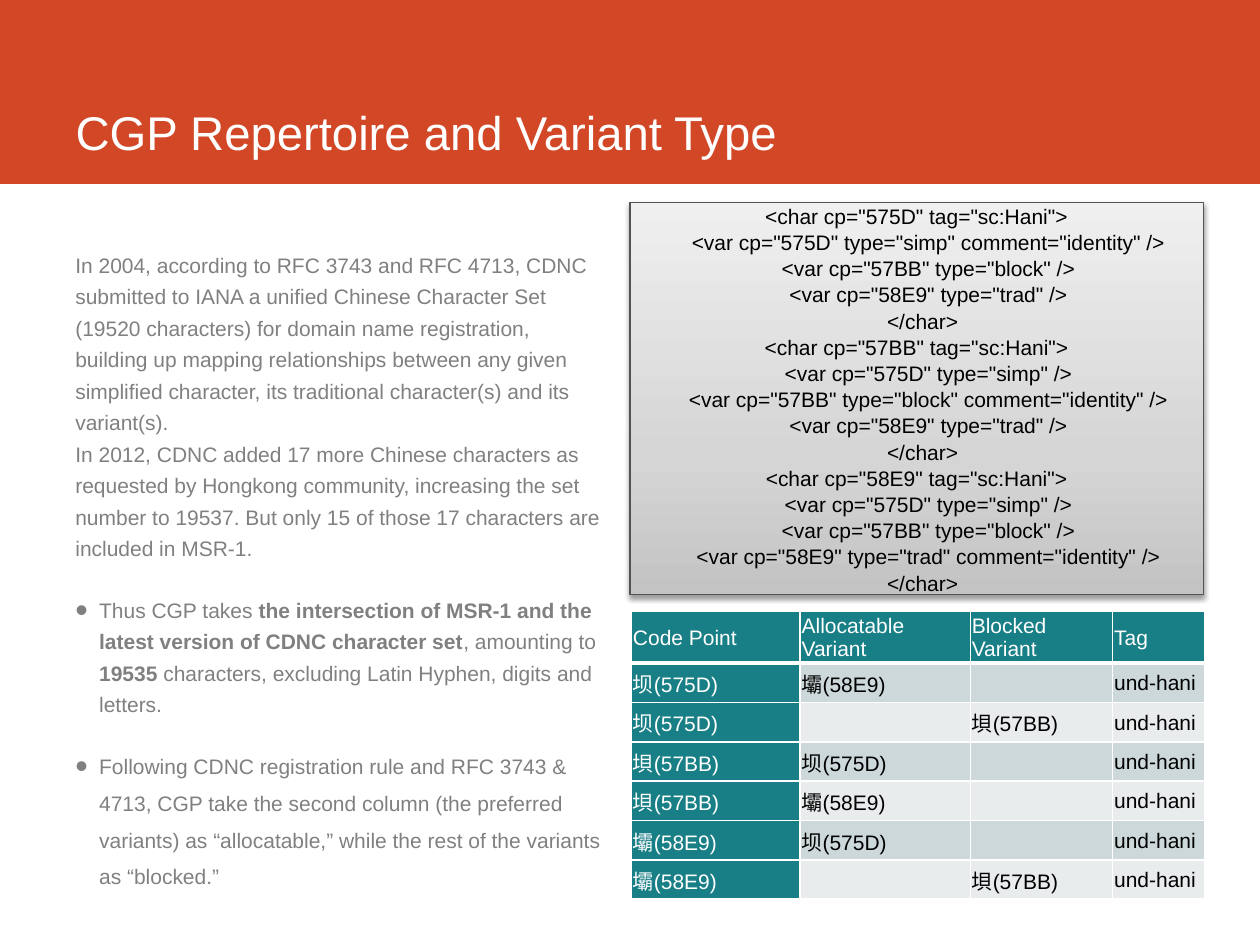
from lxml.etree import SubElement
from pptx import Presentation
from pptx.dml.color import RGBColor
from pptx.enum.shapes import MSO_SHAPE
from pptx.enum.text import MSO_ANCHOR, MSO_AUTO_SIZE, PP_ALIGN
from pptx.oxml.ns import qn
from pptx.util import Cm, Pt

COLORS = {
    "band": "D24726", "white": "FFFFFF", "body": "808080", "black": "000000",
    "teal": "197F86", "odd_row": "CCD8D9", "even_row": "E8ECED", "outline": "535353",
}
GRADIENT = [(0, "C3C3C3"), (35, "D5D5D5"), (100, "EFEFEF")]
SPACE_WIDTH = 0.12  # one 12 pt space, in cm

INTRO = [
    "In 2004, according to RFC 3743 and RFC 4713, CDNC submitted to IANA a unified Chinese "
    "Character Set (19520 characters) for domain name registration, building up mapping "
    "relationships between any given simplified character, its traditional character(s) "
    "and its variant(s).",
    "In 2012, CDNC added 17 more Chinese characters as requested by Hongkong community, "
    "increasing the set number to 19537. But only 15 of those 17 characters are included "
    "in MSR-1.",
]
# Every second part of a bullet is bold
INTERSECTION = [
    "Thus CGP takes ",
    "the intersection of MSR-1 and the latest version of CDNC character set",
    ", amounting to ", "19535",
    " characters, excluding Latin Hyphen, digits and letters.",
]
RULE = [
    "Following CDNC registration rule and RFC 3743 & 4713, CGP take the second column "
    "(the preferred variants) as “allocatable,” while the rest of the variants as “blocked.”",
]
VARIANT_TYPES = {"575D": "simp", "57BB": "block", "58E9": "trad"}
TABLE_ROWS = [
    ["Code Point", "Allocatable Variant", "Blocked Variant", "Tag"],
    ["坝(575D)", "壩(58E9)", "", "und-hani"],
    ["坝(575D)", "", "垻(57BB)", "und-hani"],
    ["垻(57BB)", "坝(575D)", "", "und-hani"],
    ["垻(57BB)", "壩(58E9)", "", "und-hani"],
    ["壩(58E9)", "坝(575D)", "", "und-hani"],
    ["壩(58E9)", "", "垻(57BB)", "und-hani"],
]
COLUMN_WIDTHS = [3.4, 3.43, 2.87, 1.85]


def rgb(name):
    return RGBColor.from_string(COLORS[name])


def apply_format(target, values):
    for name, value in values.items():
        setattr(target, name, value)


def add_run(paragraph, text, color, size=12, bold=False):
    run = paragraph.add_run()
    run.text = text
    apply_format(run.font, {"name": "Arial", "size": Pt(size), "bold": bold})
    run.font.color.rgb = rgb(color)


def next_paragraph(text_frame):
    first = text_frame.paragraphs[0]
    return text_frame.add_paragraph() if first.runs else first


def set_indent(paragraph, left, first_line=0):
    properties = paragraph._p.get_or_add_pPr()
    properties.set("marL", str(Cm(left)))
    properties.set("indent", str(Cm(first_line)))
    return properties


def add_color(parent, color):
    return SubElement(parent, qn("a:srgbClr"), val=color)


def add_band(slide):
    band = slide.shapes.add_shape(MSO_SHAPE.RECTANGLE, 0, 0, Cm(25.4), Cm(3.71))
    band.shadow.inherit = False
    band.fill.solid()
    band.fill.fore_color.rgb = rgb("band")
    band.line.fill.background()
    band.element.getparent().insert(2, band.element)  # behind the title


def add_title(slide, text):
    title = slide.shapes.title
    apply_format(title, {"left": Cm(1.27), "top": Cm(0), "width": Cm(22.4), "height": Cm(3.35)})
    apply_format(title.text_frame, {
        "vertical_anchor": MSO_ANCHOR.BOTTOM, "auto_size": MSO_AUTO_SIZE.NONE, "word_wrap": True})
    paragraph = title.text_frame.paragraphs[0]
    paragraph.alignment = PP_ALIGN.LEFT
    add_run(paragraph, text, "white", 27)


def add_bullet(text_frame, parts, spacing):
    paragraph = next_paragraph(text_frame)
    apply_format(paragraph, spacing)
    properties = set_indent(paragraph, 0.48, -0.48)
    SubElement(properties, qn("a:buSzPct"), val="171000")
    SubElement(properties, qn("a:buFont"), typeface="Arial")
    SubElement(properties, qn("a:buChar"), char="•")
    for index, part in enumerate(parts):
        add_run(paragraph, part, "body", bold=index % 2 == 1)


def add_body(slide):
    box = slide.shapes.add_textbox(Cm(1.27), Cm(4.83), Cm(11.1), Cm(12.83))
    text_frame = box.text_frame
    text_frame.word_wrap = True
    for text in INTRO:
        paragraph = next_paragraph(text_frame)
        paragraph.line_spacing = 1.25
        add_run(paragraph, text, "body")
    add_bullet(text_frame, INTERSECTION, {"line_spacing": 1.25, "space_before": Pt(17.3)})
    add_bullet(text_frame, RULE, {
        "line_spacing": 1.46, "space_before": Pt(14.3), "space_after": Pt(9)})


def code_lines():
    """Yield the indent in spaces and the text of each line."""
    for code in VARIANT_TYPES:
        yield 0, f'<char cp="{code}" tag="sc:Hani">'
        for variant, kind in VARIANT_TYPES.items():
            comment = ' comment="identity"' if variant == code else ""
            yield 4, f'<var cp="{variant}" type="{kind}"{comment} />'
        yield 2, "</char>"


def set_gradient(shape):
    shape.fill.gradient()
    shape.fill.gradient_angle = 90
    stops = shape.element.spPr.find(qn("a:gradFill")).find(qn("a:gsLst"))
    for stop in list(stops):
        stops.remove(stop)
    for position, color in GRADIENT:
        add_color(SubElement(stops, qn("a:gs"), pos=str(position * 1000)), color)


def set_shadow(shape):
    shape.shadow.inherit = False
    effects = shape.element.spPr.find(qn("a:effectLst"))
    shadow = SubElement(effects, qn("a:outerShdw"), blurRad=str(Pt(3.1)), dist=str(Pt(1.6)),
                        dir="5400000", rotWithShape="0")
    SubElement(add_color(shadow, COLORS["black"]), qn("a:alpha"), val="38000")


def add_code_box(slide):
    box = slide.shapes.add_shape(MSO_SHAPE.RECTANGLE, Cm(12.7), Cm(4.09), Cm(11.56), Cm(7.9))
    set_gradient(box)
    box.line.color.rgb = rgb("outline")
    box.line.width = Pt(0.75)
    set_shadow(box)
    text_frame = box.text_frame
    apply_format(text_frame, {"word_wrap": True, "vertical_anchor": MSO_ANCHOR.MIDDLE})
    for spaces, text in code_lines():
        paragraph = next_paragraph(text_frame)
        apply_format(paragraph, {"alignment": PP_ALIGN.CENTER, "line_spacing": 1.04})
        set_indent(paragraph, spaces * SPACE_WIDTH)
        add_run(paragraph, text, "black")


def set_borders(cell, bottom_width):
    properties = cell._tc.get_or_add_tcPr()
    widths = {"lnL": 1, "lnR": 1, "lnT": 1, "lnB": bottom_width}
    for position, (side, width) in enumerate(widths.items()):
        line = SubElement(properties, qn(f"a:{side}"), w=str(Pt(width)))
        add_color(SubElement(line, qn("a:solidFill")), COLORS["white"])
        properties.insert(position, line)  # borders come before the fill


def add_variant_table(slide):
    frame = slide.shapes.add_table(len(TABLE_ROWS), len(COLUMN_WIDTHS),
                                   Cm(12.73), Cm(12.32), Cm(11.55), Cm(5.53))
    table = frame.table
    apply_format(table, {"first_row": False, "horz_banding": False})
    for column, width in zip(table.columns, COLUMN_WIDTHS):
        column.width = Cm(width)
    for row_index, texts in enumerate(TABLE_ROWS):
        table.rows[row_index].height = Cm(0.79)
        for column_index, text in enumerate(texts):
            cell = table.cell(row_index, column_index)
            is_header = row_index == 0 or column_index == 0
            row_color = "odd_row" if row_index % 2 else "even_row"
            apply_format(cell, {
                "margin_left": Cm(0.03), "margin_right": Cm(0.03), "margin_top": Cm(0.03),
                "margin_bottom": 0, "vertical_anchor": MSO_ANCHOR.MIDDLE})
            cell.fill.solid()
            cell.fill.fore_color.rgb = rgb("teal" if is_header else row_color)
            set_borders(cell, 3 if row_index == 0 else 1)
            add_run(cell.text_frame.paragraphs[0], text, "white" if is_header else "black")


def main():
    presentation = Presentation()
    apply_format(presentation, {"slide_width": Cm(25.4), "slide_height": Cm(19.05)})
    slide = presentation.slides.add_slide(presentation.slide_layouts[5])
    add_band(slide)
    add_title(slide, "CGP Repertoire and Variant Type")
    add_body(slide)
    add_variant_table(slide)
    add_code_box(slide)
    presentation.save("out.pptx")


if __name__ == "__main__":
    main()
